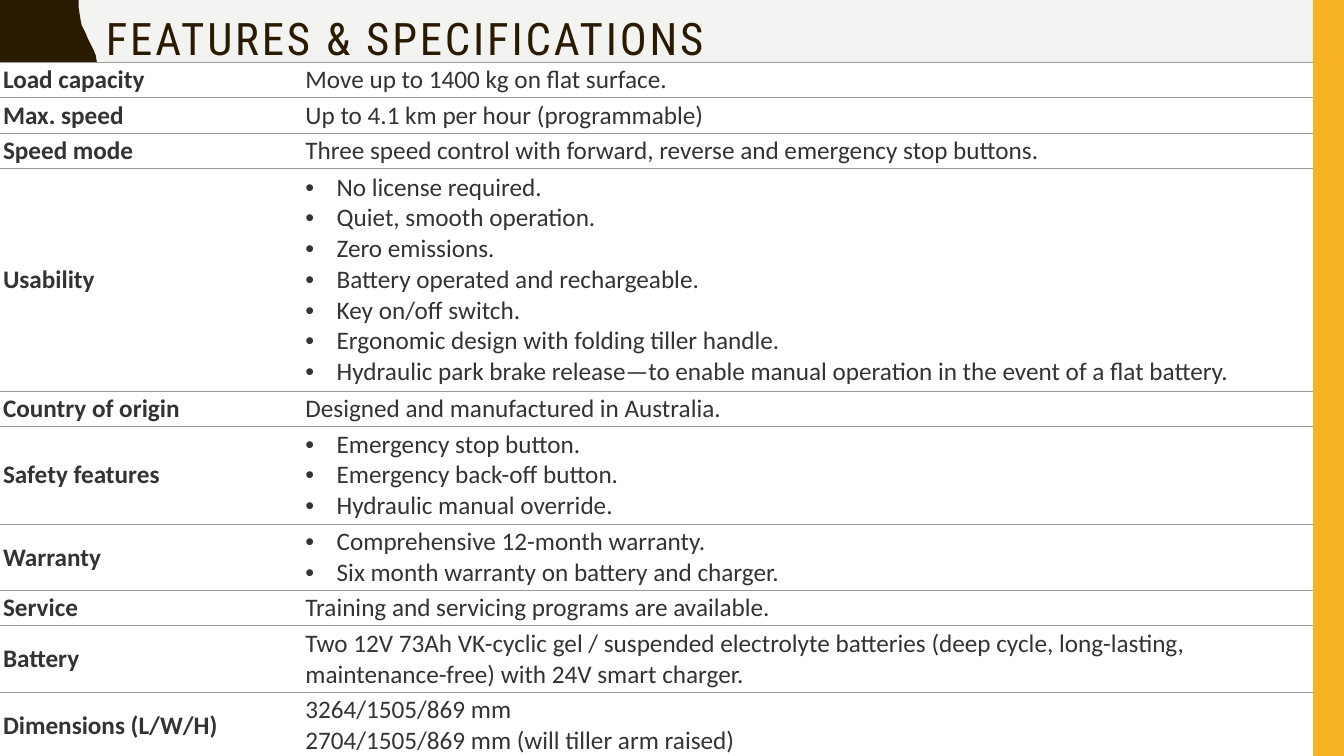
from lxml import etree
from pptx import Presentation
from pptx.dml.color import RGBColor
from pptx.enum.shapes import MSO_SHAPE
from pptx.enum.text import MSO_ANCHOR, MSO_AUTO_SIZE, PP_ALIGN
from pptx.oxml.ns import qn
from pptx.util import Inches, Pt

DARK, AMBER, PAPER = "2A1A00", "F8B323", "F3F3F2"
WHITE, INK, RULE = "FFFFFF", "333333", "999999"
HALF_WAVE = [
    (0.78, 0), (0.78, 0.07), (0.79, 0.14), (0.8, 0.2), (0.81, 0.25), (0.83, 0.29),
    (0.85, 0.33), (0.87, 0.38), (0.89, 0.42), (0.91, 0.46), (0.93, 0.5),
    (0.95, 0.55), (0.96, 0.61), (0.97, 0.68), (0.97, 0.75),
]
WAVE_LENGTH = 1.5
WAVE_COUNT = 5
LINE_HEIGHT = 0.31
CELL_INSET = 0.02

# Label, lines of text, whether they are bulleted, number of lines shown
SPECIFICATIONS = [
    ("Load capacity", ["Move up to 1400 kg on flat surface."], False, 1),
    ("Max. speed", ["Up to 4.1 km per hour (programmable)"], False, 1),
    ("Speed mode",
     ["Three speed control with forward, reverse and emergency stop buttons."], False, 1),
    ("Usability", [
        "No license required.",
        "Quiet, smooth operation.",
        "Zero emissions.",
        "Battery operated and rechargeable.",
        "Key on/off switch.",
        "Ergonomic design with folding tiller handle.",
        "Hydraulic park brake release—to enable manual operation "
        "in the event of a flat battery.",
    ], True, 7),
    ("Country of origin", ["Designed and manufactured in Australia."], False, 1),
    ("Safety features", [
        "Emergency stop button.",
        "Emergency back-off button.",
        "Hydraulic manual override.",
    ], True, 3),
    ("Warranty", [
        "Comprehensive 12-month warranty.",
        "Six month warranty on battery and charger.",
    ], True, 2),
    ("Service", ["Training and servicing programs are available."], False, 1),
    ("Battery", [
        "Two 12V 73Ah VK-cyclic gel / suspended electrolyte batteries (deep cycle, "
        "long-lasting, maintenance-free) with 24V smart charger.",
    ], False, 2),
    ("Dimensions (L/W/H)", [
        "3264/1505/869 mm",
        "2704/1505/869 mm (will tiller arm raised)",
    ], False, 2),
]


def paint(fill, color):
    fill.solid()
    fill.fore_color.rgb = RGBColor.from_string(color)


def style_shape(shape, color):
    paint(shape.fill, color)
    shape.line.fill.background()
    shape.shadow.inherit = False


def add_run(paragraph, text, font_name, size, color, bold=False):
    run = paragraph.add_run()
    run.text = text
    run.font.name = font_name
    run.font.size = Pt(size)
    run.font.bold = bold
    run.font.color.rgb = RGBColor.from_string(color)
    return run


def add_wavy_edge(slide):
    half_wave = HALF_WAVE + [(x, WAVE_LENGTH - y) for x, y in HALF_WAVE[-2::-1]]
    edge = [(Inches(x), Inches(y + wave * WAVE_LENGTH))
            for wave in range(WAVE_COUNT) for x, y in half_wave]
    builder = slide.shapes.build_freeform(0, 0)
    builder.add_line_segments(edge + [(0, Inches(7.5))], close=True)
    style_shape(builder.convert_to_shape(), DARK)


def add_side_bar(slide):
    bar = slide.shapes.add_shape(
        MSO_SHAPE.RECTANGLE, Inches(13.02), 0, Inches(0.31), Inches(7.5))
    style_shape(bar, AMBER)


def fill_title(slide, text):
    title = slide.shapes.title
    title.left, title.top = Inches(0.95), Inches(0.1)
    title.width, title.height = Inches(11.12), Inches(0.62)
    frame = title.text_frame
    frame.word_wrap = True
    frame.auto_size = MSO_AUTO_SIZE.NONE
    frame.vertical_anchor = MSO_ANCHOR.MIDDLE
    paragraph = frame.paragraphs[0]
    paragraph.alignment = PP_ALIGN.LEFT
    paragraph.line_spacing = 0.9
    run = add_run(paragraph, text, "Roboto Condensed", 32, DARK)
    run.font._element.set("spc", "200")


def add_bullet(paragraph):
    properties = paragraph._p.get_or_add_pPr()
    indent = Inches(0.31)
    properties.set("marL", str(indent))
    properties.set("indent", str(-indent))
    etree.SubElement(properties, qn("a:buFont"), typeface="Arial")
    etree.SubElement(properties, qn("a:buChar"), char="•")


def set_borders(cell):
    """Rule the cell above and below, and leave its sides open."""
    properties = cell._tc.get_or_add_tcPr()
    for side in ("lnL", "lnR"):
        line = etree.SubElement(properties, qn(f"a:{side}"), w="0")
        etree.SubElement(line, qn("a:noFill"))
    for side in ("lnT", "lnB"):
        line = etree.SubElement(properties, qn(f"a:{side}"), w=str(Pt(0.75)))
        fill = etree.SubElement(line, qn("a:solidFill"))
        etree.SubElement(fill, qn("a:srgbClr"), val=RULE)


def fill_cell(cell, lines, left_inset=CELL_INSET, bold=False, bulleted=False):
    set_borders(cell)
    paint(cell.fill, WHITE)
    cell.vertical_anchor = MSO_ANCHOR.MIDDLE
    cell.margin_left = Inches(left_inset)
    cell.margin_right = cell.margin_top = cell.margin_bottom = Inches(CELL_INSET)
    frame = cell.text_frame
    for index, text in enumerate(lines):
        paragraph = frame.add_paragraph() if index else frame.paragraphs[0]
        if bulleted:
            add_bullet(paragraph)
        add_run(paragraph, text, "Calibri", 18, INK, bold)


def add_specification_table(slide):
    heights = [Inches(2 * CELL_INSET + LINE_HEIGHT * count)
               for *_, count in SPECIFICATIONS]
    table = slide.shapes.add_table(
        len(SPECIFICATIONS), 2, 0, Inches(0.62), Inches(13.02), sum(heights)).table
    table.first_row = table.horz_banding = False
    table.columns[0].width = Inches(3.01)
    table.columns[1].width = Inches(10.01)
    for index, (label, lines, bulleted, _) in enumerate(SPECIFICATIONS):
        table.rows[index].height = heights[index]
        fill_cell(table.cell(index, 0), [label], left_inset=0.03, bold=True)
        fill_cell(table.cell(index, 1), lines, bulleted=bulleted)


def main():
    presentation = Presentation()
    presentation.slide_width, presentation.slide_height = Inches(13.33), Inches(7.5)
    slide = presentation.slides.add_slide(presentation.slide_layouts[5])
    paint(slide.background.fill, PAPER)
    add_wavy_edge(slide)
    add_side_bar(slide)
    fill_title(slide, "FEATURES & SPECIFICATIONS")
    add_specification_table(slide)
    presentation.save("out.pptx")


if __name__ == "__main__":
    main()
